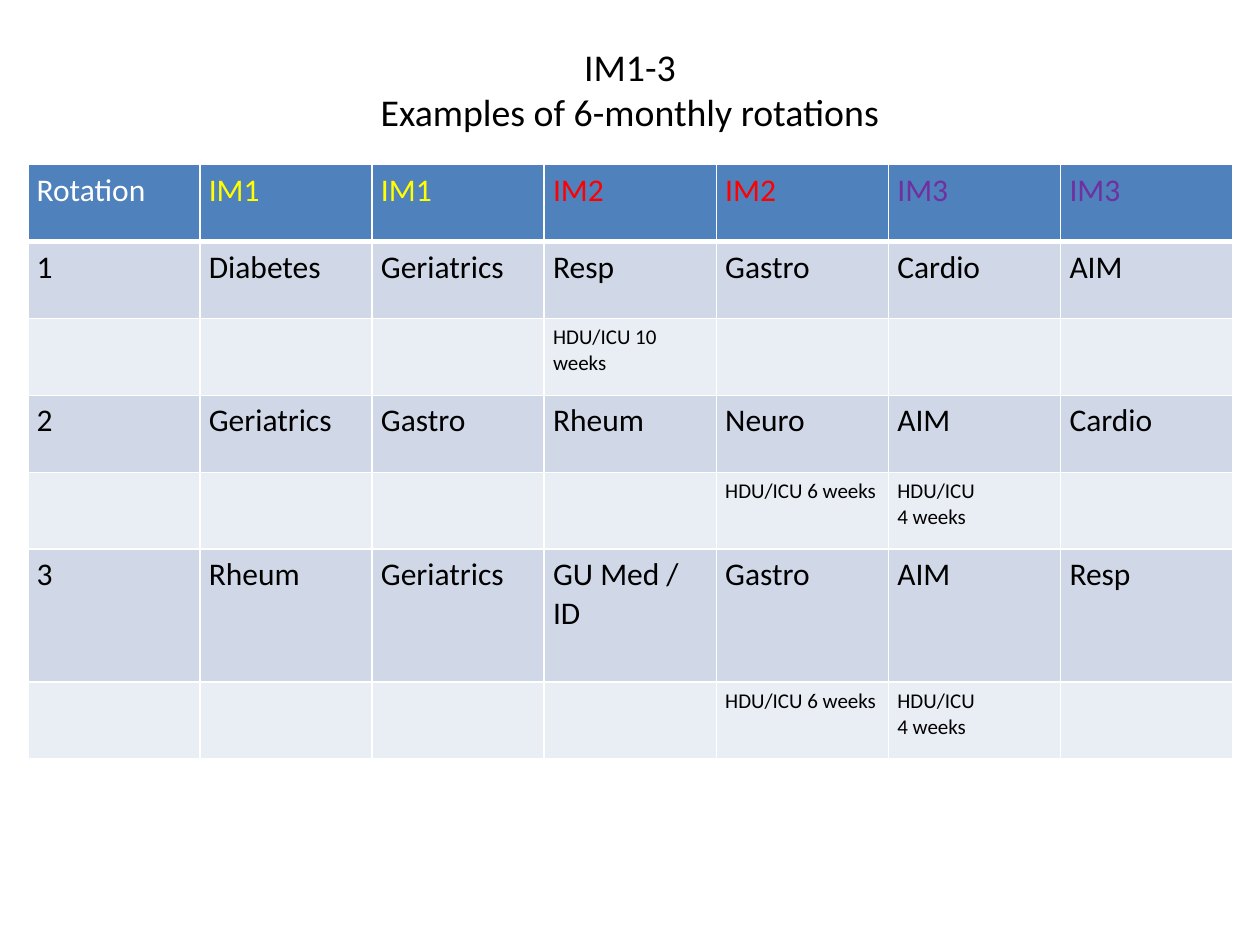
from lxml import etree
from pptx import Presentation
from pptx.dml.color import RGBColor
from pptx.enum.text import MSO_ANCHOR, PP_ALIGN
from pptx.oxml.ns import qn
from pptx.util import Cm, Pt

CENTER = PP_ALIGN.CENTER
MIDDLE = MSO_ANCHOR.MIDDLE

BLACK = RGBColor(0x00, 0x00, 0x00)
WHITE = RGBColor(0xFF, 0xFF, 0xFF)
YELLOW = RGBColor(0xFF, 0xFF, 0x00)
RED = RGBColor(0xFF, 0x00, 0x00)
PURPLE = RGBColor(0x70, 0x30, 0xA0)
HEADER_FILL = RGBColor(0x4F, 0x81, 0xBD)
POST_FILL = RGBColor(0xD0, 0xD8, 0xE8)
NOTE_FILL = RGBColor(0xE9, 0xED, 0xF4)

FONT = "Calibri"
TITLE = "IM1-3\vExamples of 6-monthly rotations"
HEADER = ["Rotation", "IM1", "IM1", "IM2", "IM2", "IM3", "IM3"]
HEADER_COLORS = [WHITE, YELLOW, YELLOW, RED, RED, PURPLE, PURPLE]
LATER_ICU = ["", "", "", "", "HDU/ICU 6 weeks", "HDU/ICU\n4 weeks", ""]
ROTATIONS = [  # posts, then the intensive care weeks within them
    (["1", "Diabetes", "Geriatrics", "Resp", "Gastro", "Cardio", "AIM"],
     ["", "", "", "HDU/ICU 10 weeks", "", "", ""]),
    (["2", "Geriatrics", "Gastro", "Rheum", "Neuro", "AIM", "Cardio"], LATER_ICU),
    (["3", "Rheum", "Geriatrics", "GU Med / ID", "Gastro", "AIM", "Resp"], LATER_ICU),
]
COL_WIDTH = Cm(3.47)
ROW_HEIGHT = Cm(1.55)
TALL_ROW, TALL_HEIGHT = 5, Cm(2.68)
CELL_FORMAT = {"margin_left": Cm(0.18), "margin_right": Cm(0.18),
               "margin_top": Cm(0.13), "margin_bottom": Cm(0.13)}


def set_font(p, size, color):
    for name, value in {"name": FONT, "size": Pt(size)}.items():
        setattr(p.font, name, value)
    p.font.color.rgb = color


def add_title(s):
    tf = s.shapes.add_textbox(Cm(1.27), Cm(0.76), Cm(22.86), Cm(2.06)).text_frame
    tf.word_wrap = True
    tf.vertical_anchor = MIDDLE
    p = tf.paragraphs[0]
    p.text = TITLE
    p.alignment = CENTER
    set_font(p, 21.6, BLACK)


def set_borders(cell, bottom):
    """Draw white cell edges, with the bottom width in points."""
    tc_pr = cell._tc.get_or_add_tcPr()
    for side, width in {"L": 1, "R": 1, "T": 1, "B": bottom}.items():
        ln = etree.SubElement(tc_pr, qn(f"a:ln{side}"), w=str(Pt(width)))
        fill = etree.SubElement(ln, qn("a:solidFill"))
        etree.SubElement(fill, qn("a:srgbClr"), val=str(WHITE))


def fill_row(row, texts, colors, size, fill, bottom=1):
    for cell, text, color in zip(row.cells, texts, colors):
        set_borders(cell, bottom)
        cell.fill.solid()
        cell.fill.fore_color.rgb = fill
        for name, value in CELL_FORMAT.items():
            setattr(cell, name, value)
        cell.text = text
        for p in cell.text_frame.paragraphs:
            set_font(p, size, color)


def add_rotation_table(s):
    n_rows, n_cols = 1 + 2 * len(ROTATIONS), len(HEADER)
    table = s.shapes.add_table(n_rows, n_cols, Cm(0.56), Cm(3.32),
                               COL_WIDTH * n_cols, ROW_HEIGHT * n_rows).table
    table.first_row = table.horz_banding = False
    for col in table.columns:
        col.width = COL_WIDTH
    for row in table.rows:
        row.height = ROW_HEIGHT
    table.rows[TALL_ROW].height = TALL_HEIGHT

    fill_row(table.rows[0], HEADER, HEADER_COLORS, 18, HEADER_FILL, bottom=3)
    body_colors = [BLACK] * n_cols
    for i, (posts, icu_weeks) in enumerate(ROTATIONS):
        fill_row(table.rows[2 * i + 1], posts, body_colors, 18, POST_FILL)
        fill_row(table.rows[2 * i + 2], icu_weeks, body_colors, 12, NOTE_FILL)


def main():
    prs = Presentation()
    prs.slide_width, prs.slide_height = Cm(25.4), Cm(19.05)
    s = prs.slides.add_slide(prs.slide_layouts[6])
    add_title(s)
    add_rotation_table(s)
    prs.save("out.pptx")


if __name__ == "__main__":
    main()
